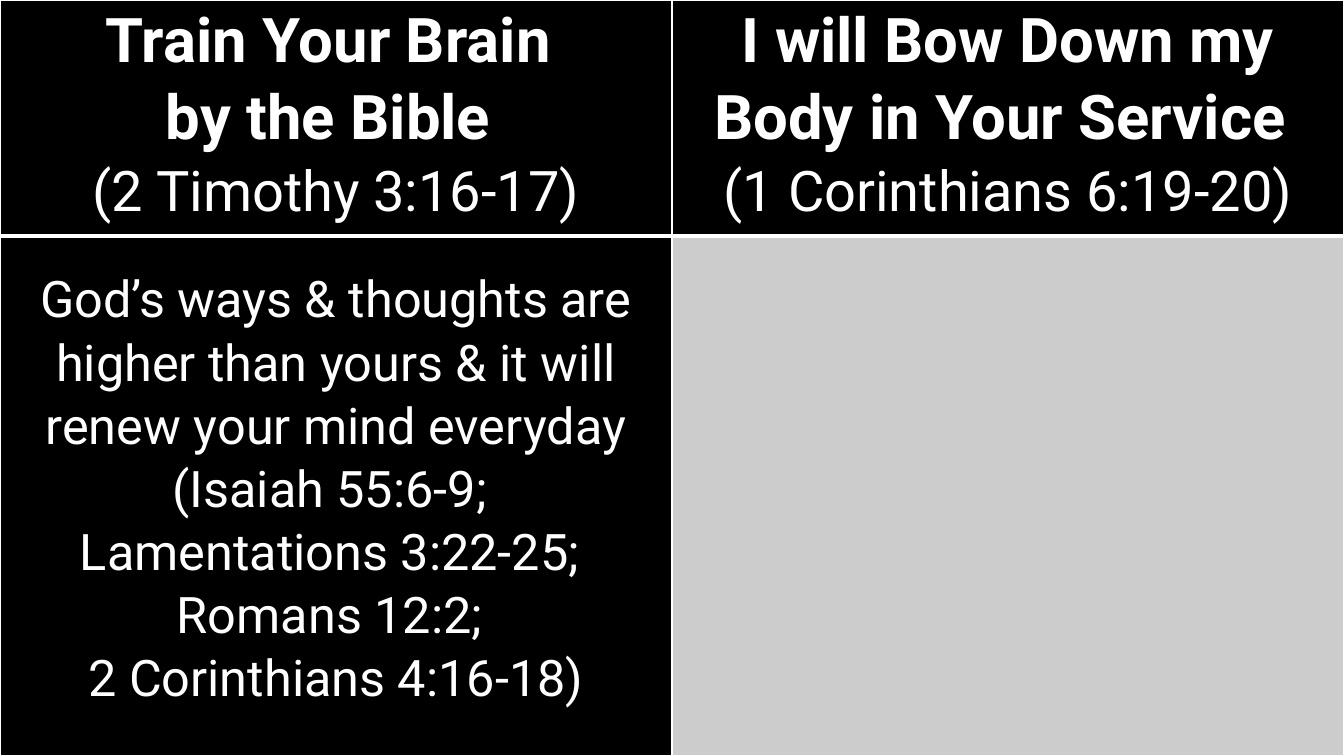
from dataclasses import dataclass

from lxml import etree
from pptx import Presentation
from pptx.dml.color import RGBColor
from pptx.enum.text import PP_ALIGN as Align
from pptx.oxml.ns import qn
from pptx.table import _Cell as Cell
from pptx.util import Inches, Pt

BLACK, WHITE, GREY = "000000", "FFFFFF", "CCCCCC"
WIDTH, HEIGHT, HEADER_HEIGHT = 13.33, 7.5, 2.34


@dataclass(frozen=True)
class Line:
    text: str
    size: int = 36
    bold: bool = False


@dataclass(frozen=True)
class Panel:
    lines: tuple[Line, ...] = ()
    fill: str = BLACK
    top_margin: float = 0
    bottom_border: int = 1


def header(title: tuple[str, ...], verse: str) -> Panel:
    lines = tuple(Line(text, 44, True) for text in title)
    return Panel((*lines, Line(verse, 40)), bottom_border=3)


PANELS = (
    (
        header(("Train Your Brain ", "by the Bible "), "(2 Timothy 3:16-17)"),
        header(("I will Bow Down my Body in Your Service ",), "(1 Corinthians 6:19-20)"),
    ),
    (
        Panel(
            (
                Line("God’s ways & thoughts are higher than yours & it will "
                     "renew your mind everyday (Isaiah 55:6-9; "),
                Line("Lamentations 3:22-25; "),
                Line("Romans 12:2; "),
                Line("2 Corinthians 4:16-18)"),
            ),
            top_margin=0.31,
        ),
        Panel(fill=GREY),
    ),
)


def color(value: str) -> RGBColor:
    return RGBColor.from_string(value)


def set_borders(cell: Cell, bottom: int) -> None:
    properties = cell._tc.get_or_add_tcPr()
    widths = {"a:lnL": 1, "a:lnR": 1, "a:lnT": 1, "a:lnB": bottom}
    for index, (tag, width) in enumerate(widths.items()):
        border = etree.Element(qn(tag), w=str(Pt(width)))
        fill = etree.SubElement(border, qn("a:solidFill"))
        etree.SubElement(fill, qn("a:srgbClr"), val=WHITE)
        properties.insert(index, border)  # borders precede the cell fill


def fill_cell(cell: Cell, panel: Panel) -> None:
    cell.fill.solid()
    cell.fill.fore_color.rgb = color(panel.fill)
    set_borders(cell, panel.bottom_border)
    cell.margin_left = cell.margin_right = Inches(0.07)
    cell.margin_top = Inches(panel.top_margin)
    cell.margin_bottom = 0
    frame = cell.text_frame
    for index, line in enumerate(panel.lines):
        para = frame.add_paragraph() if index else frame.paragraphs[0]
        para.text = line.text
        para.alignment = Align.CENTER
        para.line_spacing = 1.07
        para.font.name = "Roboto"
        para.font.size = Pt(line.size)
        para.font.bold = line.bold
        para.font.color.rgb = color(WHITE)


def main() -> None:
    deck = Presentation()
    deck.slide_width, deck.slide_height = Inches(WIDTH), Inches(HEIGHT)
    page = deck.slides.add_slide(deck.slide_layouts[6])
    page.background.fill.solid()
    page.background.fill.fore_color.rgb = color(BLACK)

    # Two-by-two table over the whole slide
    table = page.shapes.add_table(2, 2, 0, 0, Inches(WIDTH), Inches(HEIGHT)).table
    table.rows[0].height = Inches(HEADER_HEIGHT)
    table.rows[1].height = Inches(HEIGHT - HEADER_HEIGHT)
    for row, panels in enumerate(PANELS):
        for column, panel in enumerate(panels):
            fill_cell(table.cell(row, column), panel)

    deck.save("out.pptx")


if __name__ == "__main__":
    main()
